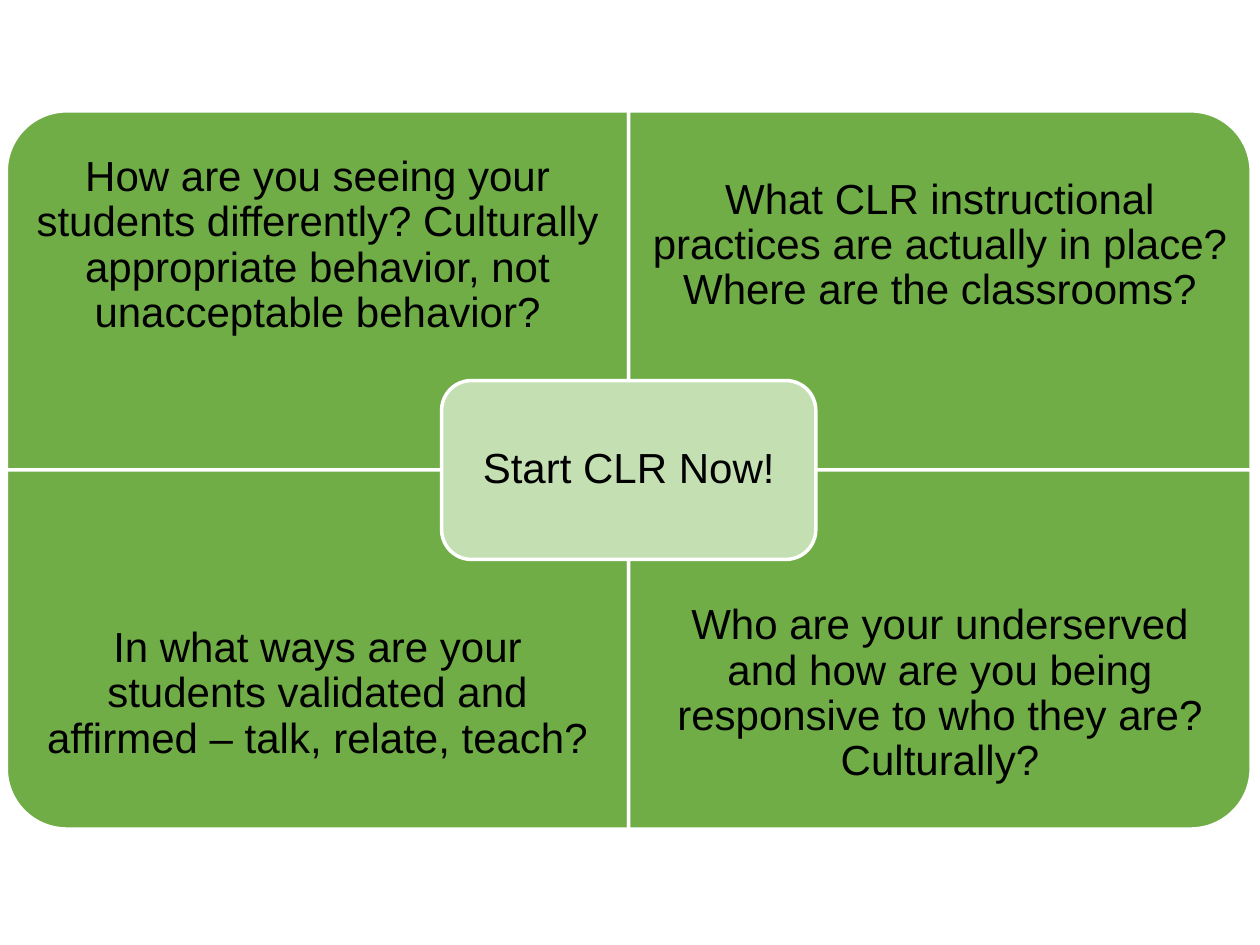
from math import cos, pi, sin

from pptx import Presentation
from pptx.dml.color import RGBColor
from pptx.enum.shapes import MSO_SHAPE
from pptx.enum.text import MSO_ANCHOR, PP_ALIGN
from pptx.util import Inches, Pt

ROUNDED = MSO_SHAPE.ROUNDED_RECTANGLE
MIDDLE = MSO_ANCHOR.MIDDLE
CENTER = PP_ALIGN.CENTER

COLORS = {"quadrant": "70AD47", "hub": "C4E0B2", "line": "FFFFFF", "text": "000000"}

CENTER_X, CENTER_Y = 4.99, 3.73
QUADRANT_WIDTH, QUADRANT_HEIGHT = 4.94, 2.85
RADIUS = 0.48
HUB_WIDTH, HUB_HEIGHT = 2.97, 1.42
ARC_STEPS = 24

# Horizontal and vertical direction from the centre, then the question
QUADRANTS = [
    (-1, -1, "How are you seeing your students differently? Culturally "
             "appropriate behavior, not unacceptable behavior?"),
    (1, -1, "What CLR instructional practices are actually in place? "
            "Where are the classrooms?"),
    (-1, 1, "In what ways are your students validated and affirmed – "
            "talk, relate, teach?"),
    (1, 1, "Who are your underserved and how are you being responsive "
           "to who they are? Culturally?"),
]


def finish(shape, fill, text, side, top, bottom):
    """Colour a shape and write its centred text with the given insets."""
    shape.shadow.inherit = False
    shape.fill.solid()
    shape.fill.fore_color.rgb = RGBColor.from_string(COLORS[fill])
    shape.line.color.rgb = RGBColor.from_string(COLORS["line"])
    shape.line.width = Pt(2)

    frame = shape.text_frame
    frame.word_wrap = True
    frame.vertical_anchor = MIDDLE
    frame.margin_left = frame.margin_right = Inches(side)
    frame.margin_top, frame.margin_bottom = Inches(top), Inches(bottom)
    para = frame.paragraphs[0]
    para.alignment = CENTER
    para.line_spacing = 0.9
    span = para.add_run()
    span.text = text
    span.font.name = "Arial"
    span.font.size = Pt(24)
    span.font.color.rgb = RGBColor.from_string(COLORS["text"])


deck = Presentation()
deck.slide_width, deck.slide_height = Inches(10), Inches(7.5)
page = deck.slides.add_slide(deck.slide_layouts[6])

# Four quadrants, each with its outer corner rounded
for across, down, question in QUADRANTS:
    offsets = [(0, QUADRANT_HEIGHT)]
    for step in range(ARC_STEPS + 1):
        angle = pi / 2 * step / ARC_STEPS
        offsets.append((QUADRANT_WIDTH - RADIUS + RADIUS * sin(angle),
                        QUADRANT_HEIGHT - RADIUS + RADIUS * cos(angle)))
    offsets.append((QUADRANT_WIDTH, 0))
    points = [(Inches(CENTER_X + across * x), Inches(CENTER_Y + down * y))
              for x, y in offsets]
    builder = page.shapes.build_freeform(Inches(CENTER_X), Inches(CENTER_Y))
    builder.add_line_segments(points, close=True)
    top, bottom = (0.19, 0.9) if down < 0 else (0.9, 0.19)
    finish(builder.convert_to_shape(), "quadrant", question, 0.19, top, bottom)

# Hub over the centre
hub = page.shapes.add_shape(
    ROUNDED,
    Inches(CENTER_X - HUB_WIDTH / 2), Inches(CENTER_Y - HUB_HEIGHT / 2),
    Inches(HUB_WIDTH), Inches(HUB_HEIGHT))
finish(hub, "hub", "Start CLR Now!", 0.17, 0.17, 0.17)

deck.save("out.pptx")
